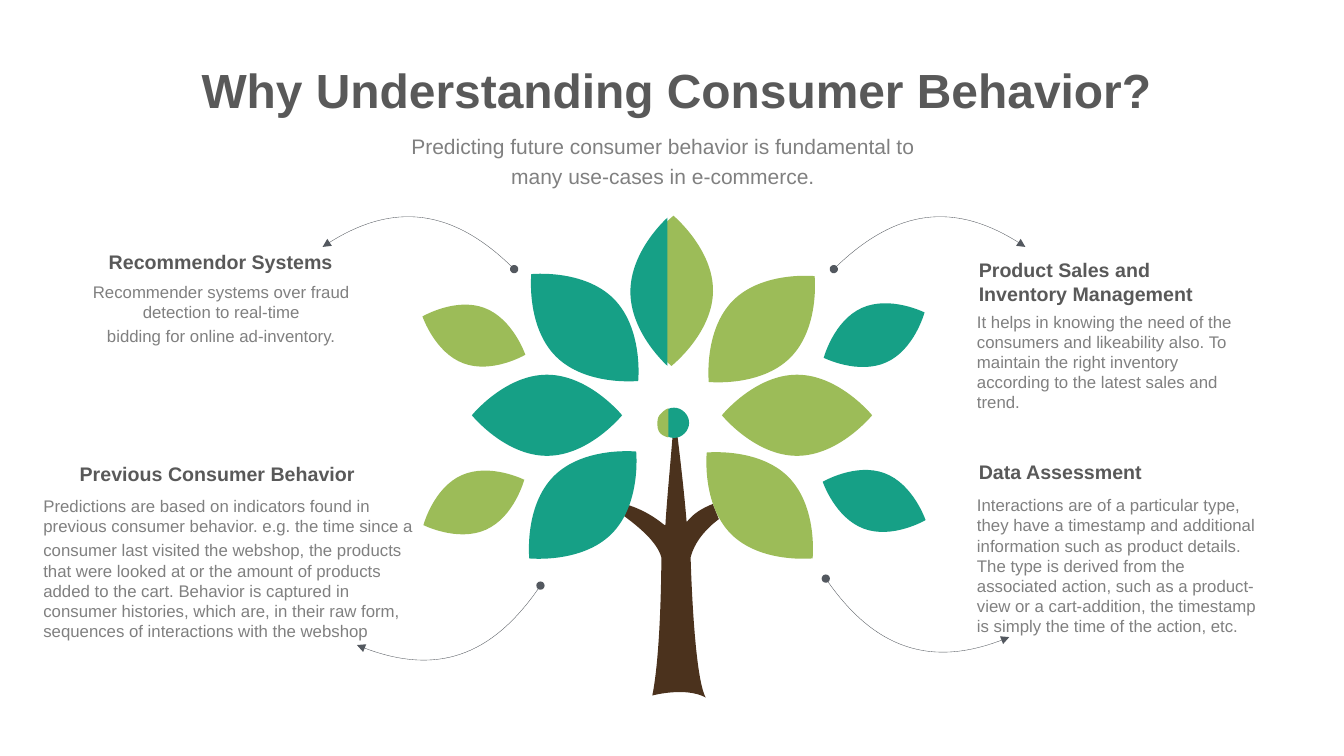
from dataclasses import dataclass

from lxml.etree import SubElement
from pptx import Presentation
from pptx.dml.color import RGBColor
from pptx.enum.text import MSO_ANCHOR as Anchor, MSO_AUTO_SIZE as AutoSize, PP_ALIGN as Align
from pptx.oxml.ns import qn
from pptx.util import Inches, Pt

Point = tuple[float, float]
Curve = tuple[Point, Point, Point]  # two control points and an end point

TEAL, GREEN, BROWN = "16A086", "9CBC58", "4B321D"
HEADING_GRAY, BODY_GRAY, ARROW_GRAY = "595959", "808080", "53585F"
BULGE = 0.27  # half width of a leaf relative to its length


@dataclass
class TextBlock:
    box: tuple[float, float, float, float]
    paragraphs: list[str]
    size: float = 12
    color: str = BODY_GRAY
    bold: bool = False
    align: Align = Align.LEFT
    anchor: Anchor = Anchor.TOP
    insets: tuple[float, float] = (0, 0)
    gap: float = 2.8
    line_spacing: float = 1.0


@dataclass
class Leaf:
    tips: tuple[Point, Point]
    color: str
    bulges: tuple[float, float] = (BULGE, BULGE)


@dataclass
class Outline:
    start: Point
    curves: list[Curve]
    color: str
    closed: bool = True


def heading(box: tuple[float, float, float, float], text: str, align: Align = Align.LEFT) -> TextBlock:
    return TextBlock(box, [text], 14, HEADING_GRAY, True, align, Anchor.MIDDLE, (0.1, 0.05))


TITLE = TextBlock((1.71, 0.51, 10, 0.82), ["Why Understanding Consumer Behavior?"], 34.2,
                  HEADING_GRAY, True, Align.CENTER, Anchor.MIDDLE, (0.1, 0.05), line_spacing=0.9)
TEXTS = [
    TextBlock((2.58, 1.25, 7.99, 0.69),
              ["Predicting future consumer behavior is fundamental to",
               "many use-cases in e-commerce."],
              size=15, align=Align.CENTER, insets=(0.13, 0.07), gap=4),
    heading((0.98, 2.45, 2.42, 0.29), "Recommendor Systems"),
    TextBlock((0.83, 2.79, 2.73, 0.65),
              ["Recommender systems over fraud detection to real-time",
               "bidding for online ad-inventory."], align=Align.CENTER),
    heading((-0.44, 4.55, 4.06, 0.29), "Previous Consumer Behavior", Align.RIGHT),
    TextBlock((0.43, 4.92, 3.75, 1.45),
              ["Predictions are based on indicators found in previous consumer behavior. "
               "e.g. the time since a",
               "consumer last visited the webshop, the products that were looked at or the "
               "amount of products added to the cart. Behavior is captured in consumer "
               "histories, which are, in their raw form, sequences of interactions with the "
               "webshop"]),
    heading((9.61, 2.65, 2.7, 0.29), "Product Sales and Inventory Management"),
    TextBlock((9.69, 3.09, 2.73, 1.01),
              ["It helps in knowing the need of the consumers and likeability also. To "
               "maintain the right inventory according to the latest sales and trend."]),
    heading((9.61, 4.53, 2.2, 0.29), "Data Assessment"),
    TextBlock((9.69, 4.91, 2.9, 1.41),
              ["Interactions are of a particular type, they have a timestamp and additional "
               "information such as product details. The type is derived from the associated "
               "action, such as a product-view or a cart-addition, the timestamp is simply "
               "the time of the action, etc."]),
]

ARROWS = [Outline(start, [curve], ARROW_GRAY, closed=False) for start, curve in [
    ((10.17, 2.45), ((9.51, 2), (8.88, 2.07), (8.27, 2.67))),
    ((10.01, 6.32), ((9.28, 6.63), (8.67, 6.44), (8.19, 5.74))),
    ((3.2, 2.45), ((3.86, 2), (4.5, 2.07), (5.1, 2.67))),
    ((3.54, 6.4), ((4.28, 6.71), (4.88, 6.52), (5.36, 5.81))),
]]

TRUNK = Outline((6.81, 5.18), [
    ((6.81, 5.18), (6.79, 4.9), (6.72, 4.33)),
    ((6.7, 4.34), (6.69, 4.34), (6.67, 4.34)),
    ((6.65, 4.59), (6.61, 5.02), (6.6, 5.21)),
    ((6.6, 5.23), (6.48, 5.09), (6.23, 5.01)),
    ((6.22, 5.05), (6.2, 5.08), (6.19, 5.12)),
    ((6.34, 5.23), (6.52, 5.38), (6.56, 5.53)),
    ((6.56, 5.53), (6.56, 6.46), (6.47, 6.9)),
    ((6.47, 6.9), (6.8, 6.81), (7, 6.92)),
    ((6.88, 6.71), (6.85, 5.53), (6.85, 5.53)),
    ((6.89, 5.37), (7.01, 5.24), (7.13, 5.15)),
    ((7.11, 5.1), (7.09, 5.05), (7.07, 5)),
    ((6.97, 5.04), (6.88, 5.09), (6.81, 5.18)),
], BROWN)

LEAVES = [
    Leaf(((6.68, 2.14), (6.66, 3.63)), GREEN),
    Leaf(((6.62, 2.16), (6.62, 3.63)), TEAL, (0, 0.25)),
    Leaf(((5.27, 2.72), (6.33, 3.78)), TEAL),
    Leaf(((4.68, 4.12), (6.17, 4.12)), TEAL),
    Leaf(((5.25, 5.54), (6.31, 4.48)), TEAL),
    Leaf(((7.03, 3.79), (8.08, 2.74)), GREEN),
    Leaf(((7.16, 4.12), (8.65, 4.12)), GREEN),
    Leaf(((7.01, 4.49), (8.06, 5.54)), GREEN),
    Leaf(((4.19, 3.14), (5.21, 3.52)), GREEN),
    Leaf(((4.2, 5.21), (5.2, 4.76)), GREEN),
    Leaf(((8.17, 3.55), (9.17, 3.1)), TEAL),
    Leaf(((8.16, 4.78), (9.18, 5.16)), TEAL),
]

BUD = [
    Outline((6.79, 4.3), [
        ((6.85, 4.24), (6.85, 4.15), (6.79, 4.09)),
        ((6.73, 4.03), (6.64, 4.03), (6.58, 4.09)),
        ((6.52, 4.15), (6.52, 4.24), (6.58, 4.3)),
        ((6.64, 4.36), (6.73, 4.36), (6.79, 4.3)),
    ], TEAL),
    Outline((6.56, 4.1), [
        ((6.53, 4.12), (6.52, 4.16), (6.52, 4.19)),
        ((6.52, 4.23), (6.52, 4.27), (6.55, 4.3)),
        ((6.58, 4.33), (6.63, 4.34), (6.63, 4.34)),
        ((6.63, 4.34), (6.63, 4.05), (6.63, 4.05)),
        ((6.63, 4.05), (6.58, 4.07), (6.56, 4.1)),
    ], GREEN),
]


def rgb(color: str) -> RGBColor:
    return RGBColor.from_string(color)


def leaf_outline(leaf: Leaf) -> Outline:
    """Two bulging sides, one on each side of the line between the tips."""
    curves: list[Curve] = []
    for (start, end), bulge in zip((leaf.tips, leaf.tips[::-1]), leaf.bulges):
        dx, dy = end[0] - start[0], end[1] - start[1]
        apex = ((start[0] + end[0]) / 2 + dy * bulge, (start[1] + end[1]) / 2 - dx * bulge)
        before = (apex[0] - dx * 0.28, apex[1] - dy * 0.28)
        after = (apex[0] + dx * 0.28, apex[1] + dy * 0.28)
        curves += [(start, before, apex), (after, end, end)] if bulge else [(start, end, end)]
    return Outline(leaf.tips[0], curves, leaf.color)


def draw_outline(slide, outline: Outline) -> None:
    points = [outline.start, *(point for curve in outline.curves for point in curve)]
    corners = [(Inches(x), Inches(y)) for x, y in points]
    builder = slide.shapes.build_freeform(*corners[0], scale=1.0)
    builder.add_line_segments(corners[1:], close=False)
    shape = builder.convert_to_shape()
    shape.shadow.inherit = False
    # Join every three segments into one Bézier curve
    track = next(shape._element.iter(qn("a:path")))
    segments = track.findall(qn("a:lnTo"))
    for first in range(0, len(segments), 3):
        bezier = SubElement(track, qn("a:cubicBezTo"))
        for segment in segments[first:first + 3]:
            bezier.append(segment[0])
            track.remove(segment)
    if outline.closed:
        SubElement(track, qn("a:close"))
        shape.fill.solid()
        shape.fill.fore_color.rgb = rgb(outline.color)
        shape.line.fill.background()
    else:
        shape.fill.background()
        shape.line.color.rgb = rgb(outline.color)
        shape.line.width = Pt(0.25)
        line = shape._element.spPr.find(qn("a:ln"))
        for tag, kind in (("a:headEnd", "triangle"), ("a:tailEnd", "oval")):
            SubElement(line, qn(tag), type=kind)


def write_text(shape, block: TextBlock) -> None:
    for name, value in zip(("left", "top", "width", "height"), block.box):
        setattr(shape, name, Inches(value))
    frame = shape.text_frame
    side, edge = map(Inches, block.insets)
    frame_format = {"word_wrap": True, "auto_size": AutoSize.NONE, "vertical_anchor": block.anchor,
                    "margin_left": side, "margin_right": side, "margin_top": edge, "margin_bottom": edge}
    for name, value in frame_format.items():
        setattr(frame, name, value)
    for index, text in enumerate(block.paragraphs):
        paragraph = frame.add_paragraph() if index else frame.paragraphs[0]
        run = paragraph.add_run()
        run.text = text
        paragraph_format = {"alignment": block.align, "line_spacing": block.line_spacing,
                            "space_before": Pt(block.gap if index else 0)}
        font_format = {"name": "Arial", "size": Pt(block.size), "bold": block.bold}
        for target, values in ((paragraph, paragraph_format), (run.font, font_format)):
            for name, value in values.items():
                setattr(target, name, value)
        run.font.color.rgb = rgb(block.color)


def main() -> None:
    presentation = Presentation()
    presentation.slide_width, presentation.slide_height = Inches(13.33), Inches(7.5)
    slide = presentation.slides.add_slide(presentation.slide_layouts[5])
    # Title and texts
    write_text(slide.shapes.title, TITLE)
    for block in TEXTS:
        write_text(slide.shapes.add_textbox(0, 0, 0, 0), block)
    # Arrows and tree
    for outline in [*ARROWS, TRUNK, *map(leaf_outline, LEAVES), *BUD]:
        draw_outline(slide, outline)
    presentation.save("out.pptx")


if __name__ == "__main__":
    main()
